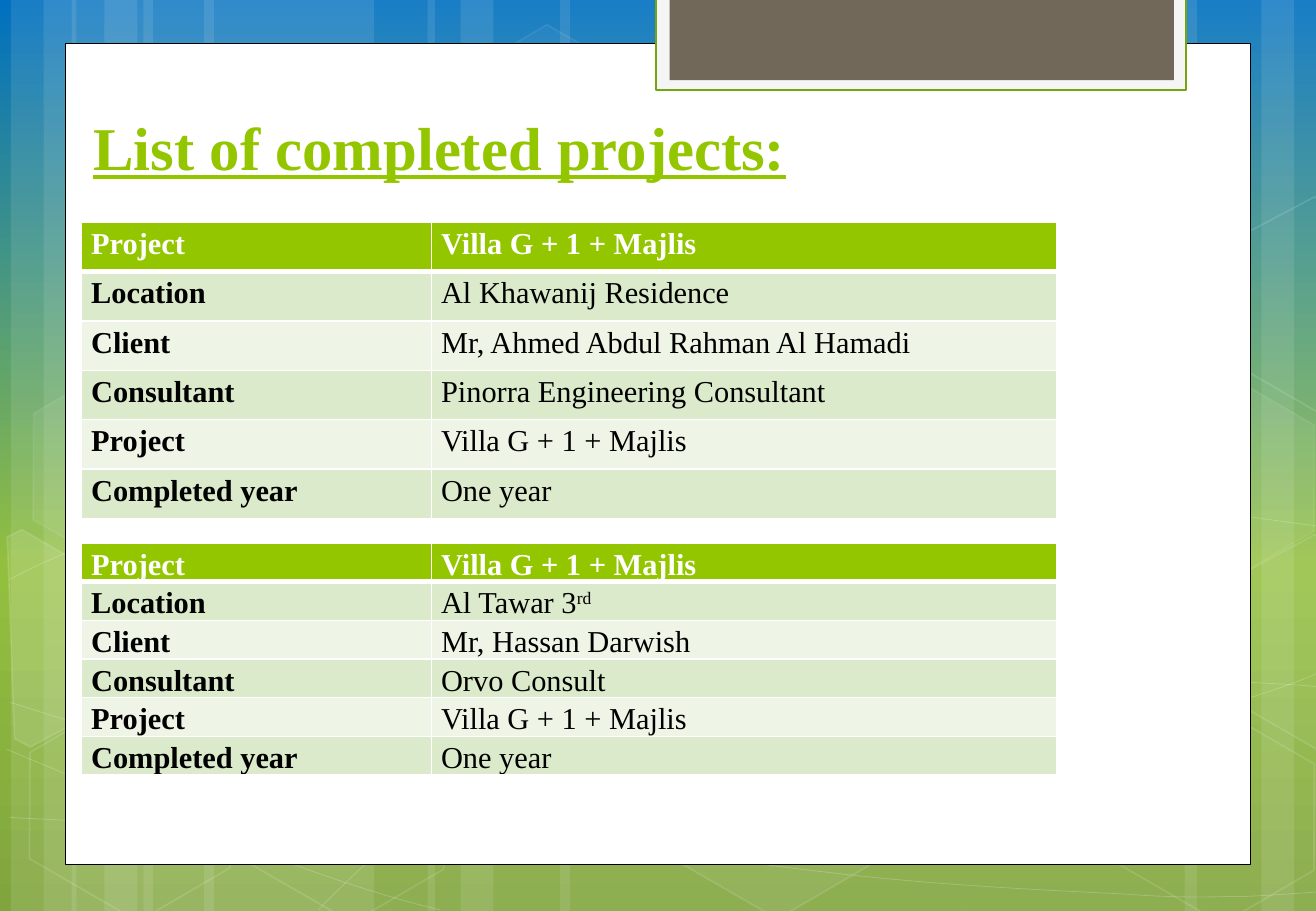
import copy
import dataclasses
import itertools

import pptx
import pptx.dml.color
import pptx.enum.shapes
import pptx.enum.text
import pptx.oxml
import pptx.oxml.ns
import pptx.util

PX = 9144
KIND = pptx.enum.shapes.MSO_SHAPE


@dataclasses.dataclass(frozen=True)
class Theme:
    """Colours, font and type sizes of the slide."""
    font: str = "Times New Roman"
    head: int = 36
    body: int = 18
    green: str = "94C600"
    white: str = "FFFFFF"
    black: str = "000000"
    mat: str = "F5F5F5"
    edge: str = "74A510"
    brown: str = "71685A"
    bands: tuple = ("EEF5E7", "DCEACC")
    sky: tuple = ((0, "0070C0"), (0.62, "93BF3F"), (1, "81A53E"))


LOOK = Theme()

BARS = ((118, 190), (9, 54), (36, 90), (168, 190), (59, 54), (86, 90),
        (795, 190), (1038, 54), (975, 90), (461, 334), (352, 54), (379, 90))

CURVES = (
    ((8, 673), (66, 676), (125, 679), (206, 678), (288, 677), (387, 675), (496, 665),
     (605, 655), (758, 636), (858, 617), (957, 598), (1058, 568), (1091, 551)),
    ((8, 477), (39, 461), (70, 446), (132, 431), (193, 416), (280, 394), (376, 387),
     (473, 380), (589, 379), (708, 387), (828, 395), (1026, 426), (1091, 434)),
    ((6, 617), (137, 672), (268, 727), (362, 749)),
    ((8, 578), (42, 589), (76, 600), (139, 616), (202, 631), (296, 656), (386, 673),
     (477, 690), (591, 708), (680, 718), (770, 729), (866, 733), (924, 736),
     (981, 740), (996, 738), (1024, 738), (1051, 737), (1071, 735), (1091, 734)),
    ((262, 749), (282, 729), (301, 709), (327, 691), (353, 673), (390, 653), (420, 639),
     (450, 625), (469, 619), (509, 609), (549, 599), (621, 585), (659, 578),
     (697, 571), (703, 571), (737, 569), (770, 566), (823, 563), (860, 562),
     (898, 561), (960, 562), (960, 562), (984, 562), (1008, 562), (1032, 562),
     (1052, 563), (1070, 564), (1080, 565), (1089, 566), (1086, 565), (1090, 566)),
)

HEXES = ((362, 36, 4, 8), (538, 589, 6, 12), (12, 591, None, 12), (15, 312, 7, 8),
         (188, 592, None, 12), (816, 453, 10, 12), (904, 593, None, 12),
         (904, 314, 7, 8))

SHARDS = (
    (((6, 442), (18, 436), (101, 484), (103, 573), (25, 615), (12, 608)), 10),
    (((1003, 483), (1082, 440), (1090, 445), (1096, 616), (1089, 620), (1006, 572)), 4),
    (((1003, 204), (1082, 162), (1091, 167), (1096, 338), (1089, 342), (1006, 294)), None),
)

VILLA = "Villa G + 1 + Majlis"
LABELS = ("Project", "Location", "Client", "Consultant", "Project", "Completed year")
FIRST = (VILLA, "Al Khawanij Residence", "Mr, Ahmed Abdul Rahman Al Hamadi",
         "Pinorra Engineering Consultant", VILLA, "One year")
SECOND = (VILLA, "Al Tawar 3^rd", "Mr, Hassan Darwish", "Orvo Consult", VILLA, "One year")


def rgb(tint):
    """Turn a hex string into a colour."""
    return pptx.dml.color.RGBColor.from_string(tint)


def tint(fill, hue, alpha=100):
    """Fill with a colour at an opacity in percent."""
    fill.solid()
    fill.fore_color.rgb = rgb(hue)
    if alpha < 100:
        node = fill._xPr.find(".//" + pptx.oxml.ns.qn("a:srgbClr"))
        node.append(pptx.oxml.parse_xml(
            f'<a:alpha {pptx.oxml.ns.nsdecls("a")} val="{alpha * 1000}"/>'))


def paint(shape, fill=None, alpha=100, line=None, width=1, fade=100):
    """Set the fill and outline of a shape."""
    shape.shadow.inherit = False
    if fill:
        tint(shape.fill, fill, alpha)
    else:
        shape.fill.background()
    if line:
        tint(shape.line.fill, line, fade)
        shape.line.width = pptx.util.Pt(width)
    else:
        shape.line.fill.background()


def place(slide, kind, box):
    """Add a preset shape in a box."""
    return slide.shapes.add_shape(kind, *(v * PX for v in box))


def trace(slide, box, points, close):
    """Draw a freeform through points set from the corner of a box."""
    spots = [((box[0] + x) * PX, (box[1] + y) * PX) for x, y in points]
    build = slide.shapes.build_freeform(*spots[0])
    build.add_line_segments(spots[1:], close=close)
    return build.convert_to_shape()


def bend(shape):
    """Join each three line segments of a freeform into one cubic curve."""
    name = pptx.oxml.ns.qn
    lines = list(shape._element.iter(name("a:lnTo")))
    for trio in zip(*[iter(lines)] * 3):
        curve = pptx.oxml.parse_xml(f'<a:cubicBezTo {pptx.oxml.ns.nsdecls("a")}/>')
        trio[0].addprevious(curve)
        for line in trio:
            curve.append(line[0])
            line.getparent().remove(line)
    return shape


def draw_sky(slide):
    """Set the three-stop gradient behind the slide."""
    fill = slide.background.fill
    fill.gradient()
    fill.gradient_angle = 270
    stops = slide.element.find(".//" + pptx.oxml.ns.qn("a:gsLst"))
    stops.append(copy.deepcopy(stops[0]))
    for stop, (spot, hue) in zip(fill.gradient_stops, LOOK.sky):
        stop.position = spot
        stop.color.rgb = rgb(hue)


def draw_decor(slide, box):
    """Draw the pale bars, curves and hexagons."""
    left, top, _, high = box
    for x, wide in BARS:
        paint(place(slide, KIND.RECTANGLE, (left + x, top, wide, high)), LOOK.white, 10)
    for points in CURVES:
        paint(bend(trace(slide, box, points, False)),
              line=LOOK.white, width=0.5, fade=20)
    for x, y, alpha, fade in HEXES:
        shape = place(slide, KIND.HEXAGON, (left + x, top + y, 190, 152))
        shape.adjustments[0] = 0.285
        shape.rotation = 30
        paint(shape, alpha and LOOK.white, alpha or 100, LOOK.white, 1, fade)
    for points, alpha in SHARDS:
        paint(trace(slide, box, points, True),
              alpha and LOOK.white, alpha or 100, LOOK.white, 1, 12)


def draw_panel(slide, box):
    """Draw the white sheet and the tab at its top right."""
    left, top = box[:2]
    paint(place(slide, KIND.RECTANGLE, box), LOOK.white, line=LOOK.black, width=0.5)
    paint(place(slide, KIND.RECTANGLE, (left + 486, top - 38, 436, 76)),
          LOOK.mat, line=LOOK.edge, width=1.25)
    paint(place(slide, KIND.RECTANGLE, (left + 497, top - 38, 415, 68)), LOOK.brown)


def style(font, size, hue, bold):
    """Set the face, size, colour and weight of a font."""
    font.name, font.size, font.bold = LOOK.font, pptx.util.Pt(size), bold
    font.color.rgb = rgb(hue)


def draw_title(slide, box, text):
    """Write the underlined heading."""
    frame = slide.shapes.add_textbox(*(v * PX for v in box)).text_frame
    frame.word_wrap = True
    frame.vertical_anchor = pptx.enum.text.MSO_ANCHOR.BOTTOM
    frame.text = text
    font = frame.paragraphs[0].runs[0].font
    style(font, LOOK.head, LOOK.green, True)
    font.underline = True


def edge(cell, row):
    """Give a cell white borders, thick below the header."""
    wide = {"L": 1, "R": 1, "T": 3 if row == 1 else 1, "B": 1 if row else 3}
    for side, size in wide.items():
        cell._tc.get_or_add_tcPr().append(pptx.oxml.parse_xml(
            f'<a:ln{side} {pptx.oxml.ns.nsdecls("a")} w="{size * 12700}"><a:solidFill>'
            f'<a:srgbClr val="{LOOK.white}"/></a:solidFill></a:ln{side}>'))


def draw_table(slide, box, facts):
    """Draw one project table; a caret starts a raised run."""
    table = slide.shapes.add_table(len(LABELS), 2, *(v * PX for v in box)).table
    table.horz_banding = False
    table.columns[0].width = 288 * PX
    table.columns[1].width = (box[2] - 288) * PX
    for row, col in itertools.product(range(len(LABELS)), range(2)):
        cell = table.cell(row, col)
        edge(cell, row)
        tint(cell.fill, LOOK.bands[row % 2] if row else LOOK.green)
        cell.margin_left = cell.margin_right = 8 * PX
        cell.margin_top = cell.margin_bottom = 0
        text, _, raised = (LABELS, facts)[col][row].partition("^")
        para = cell.text_frame.paragraphs[0]
        para.text = text
        para.line_spacing = 1.15
        if raised:
            run = para.add_run()
            run.text = raised
            run._r.get_or_add_rPr().set("baseline", "30000")
        for run in para.runs:
            style(run.font, LOOK.body, LOOK.black if row else LOOK.white,
                  row == 0 or col == 0)


def main():
    """Build the slide and save it."""
    deck = pptx.Presentation()
    deck.slide_width, deck.slide_height = 1083 * PX, 750 * PX
    slide = deck.slides.add_slide(deck.slide_layouts[6])
    draw_sky(slide)
    draw_decor(slide, (0, 0, 1083, 750))
    draw_panel(slide, (54, 36, 975, 676))
    draw_table(slide, (67, 183, 803, 244), FIRST)
    draw_table(slide, (67, 447, 803, 138), SECOND)
    draw_title(slide, (67, 76, 808, 79), "List of completed projects:")
    deck.save("out.pptx")


if __name__ == "__main__":
    main()
